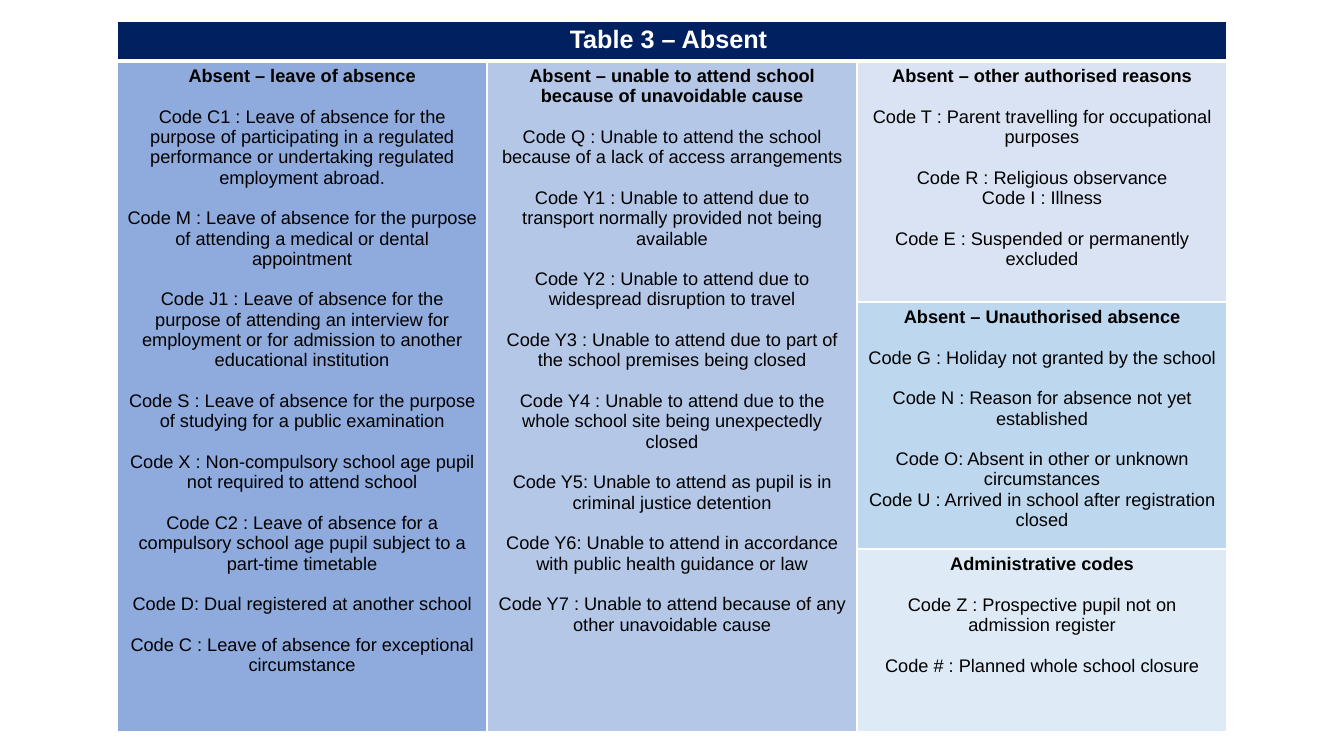
"""Build a slide with a table of school absence codes."""
from dataclasses import dataclass

from lxml.etree import SubElement
from pptx import Presentation
from pptx.dml.color import RGBColor as Rgb
from pptx.enum.text import PP_ALIGN as Align
from pptx.oxml.ns import qn
from pptx.util import Emu, Pt


@dataclass(frozen=True)
class Theme:
    """Colours, font and sizes in points."""
    font: str = "Arial"
    title_size: int = 18
    body_size: int = 13
    code_gap: float = 14.5
    rule: int = 1
    title_rule: int = 3
    white: str = "FFFFFF"
    black: str = "000000"
    title_fill: str = "002060"
    leave_fill: str = "8FAADC"
    unavoidable_fill: str = "B4C7E7"
    authorised_fill: str = "DAE3F3"
    unauthorised_fill: str = "BDD7EE"
    admin_fill: str = "DEEBF7"


THEME = Theme()
SLIDE_WIDTH, SLIDE_HEIGHT = 1344, 756
EMU_PER_PX = 12192000 / SLIDE_WIDTH
TABLE_LEFT, TABLE_TOP = 117, 21
COLUMN_WIDTH, COLUMN_COUNT = 370, 3
ROW_HEIGHTS = (40, 241, 247, 183)

TITLE = "Table 3 – Absent "
SECTIONS = [
    ((1, 0), (3, 0), THEME.leave_fill, "Absent – leave of absence", [
        ["Code C1 : Leave of absence for the purpose of participating in a regulated "
         "performance or undertaking regulated employment abroad."],
        ["Code M : Leave of absence for the purpose of attending a medical or dental appointment"],
        ["Code J1 : Leave of absence for the purpose of attending an interview for employment "
         "or for admission to another educational institution"],
        ["Code S : Leave of absence for the purpose of studying for a public examination"],
        ["Code X : Non-compulsory school age pupil not required to attend school"],
        ["Code C2 : Leave of absence for a compulsory school age pupil subject to a "
         "part-time timetable"],
        ["Code D: Dual registered at another school"],
        ["Code C : Leave of absence for exceptional circumstance"],
    ]),
    ((1, 1), (3, 1), THEME.unavoidable_fill,
     "Absent – unable to attend school because of unavoidable cause", [
        ["Code Q : Unable to attend the school because of a lack of access arrangements"],
        ["Code Y1 : Unable to attend due to transport normally provided not being available"],
        ["Code Y2 : Unable to attend due to widespread disruption to travel"],
        ["Code Y3 : Unable to attend due to part of the school premises being closed"],
        ["Code Y4 : Unable to attend due to the whole school site being unexpectedly closed"],
        ["Code Y5: Unable to attend as pupil is in criminal justice detention"],
        ["Code Y6: Unable to attend in accordance with public health guidance or law"],
        ["Code Y7 : Unable to attend because of any other unavoidable cause"],
    ]),
    ((1, 2), (1, 2), THEME.authorised_fill, "Absent – other authorised reasons", [
        ["Code T : Parent travelling for occupational purposes"],
        ["Code R : Religious observance", "Code I : Illness"],
        ["Code E : Suspended or permanently excluded"],
    ]),
    ((2, 2), (2, 2), THEME.unauthorised_fill, "Absent – Unauthorised absence", [
        ["Code G : Holiday not granted by the school"],
        ["Code N : Reason for absence not yet established"],
        ["Code O: Absent in other or unknown circumstances",
         "Code U : Arrived in school after registration closed"],
    ]),
    ((3, 2), (3, 2), THEME.admin_fill, "Administrative codes", [
        ["Code Z : Prospective pupil not on admission register"],
        ["Code # : Planned whole school closure"],
    ]),
]


def px(length):
    """Turn pixels into EMU."""
    return Emu(round(length * EMU_PER_PX))


def write(paragraph, text, size=THEME.body_size, color=THEME.black, bold=False, gap=0):
    """Write one centred paragraph with its format."""
    paragraph.alignment = Align.CENTER
    paragraph.space_before = Pt(gap)
    run = paragraph.add_run()
    run.text = text
    run.font.name = THEME.font
    run.font.size = Pt(size)
    run.font.bold = bold
    run.font.color.rgb = Rgb.from_string(color)


def paint(cell, color):
    """Give a cell a solid fill."""
    cell.fill.solid()
    cell.fill.fore_color.rgb = Rgb.from_string(color)


def rule_cell(cell, bottom=THEME.rule):
    """Draw white rules on all four sides of a cell."""
    properties = cell._tc.get_or_add_tcPr()
    widths = {"L": THEME.rule, "R": THEME.rule, "T": THEME.rule, "B": bottom}
    for position, (side, width) in enumerate(widths.items()):
        rule = SubElement(properties, qn(f"a:ln{side}"), w=str(Pt(width)))
        solid = SubElement(rule, qn("a:solidFill"))
        SubElement(solid, qn("a:srgbClr"), val=THEME.white)
        properties.insert(position, rule)


def add_absence_table(slide):
    """Add the empty ruled table."""
    frame = slide.shapes.add_table(
        len(ROW_HEIGHTS), COLUMN_COUNT, px(TABLE_LEFT), px(TABLE_TOP),
        px(COLUMN_WIDTH * COLUMN_COUNT), px(sum(ROW_HEIGHTS)))
    table = frame.table
    table.horz_banding = False
    for column in table.columns:
        column.width = px(COLUMN_WIDTH)
    for index, (row, height) in enumerate(zip(table.rows, ROW_HEIGHTS)):
        row.height = px(height)
        for cell in row.cells:
            rule_cell(cell, bottom=THEME.rule if index else THEME.title_rule)
    return table


def fill_title(table):
    """Fill the title row across all columns."""
    title = table.cell(0, 0)
    title.merge(table.cell(0, COLUMN_COUNT - 1))
    paint(title, THEME.title_fill)
    write(title.text_frame.paragraphs[0], TITLE,
          size=THEME.title_size, color=THEME.white, bold=True)


def fill_section(table, first, last, color, heading, groups):
    """Fill one section with its heading and groups of codes."""
    section = table.cell(*first)
    if first != last:
        section.merge(table.cell(*last))
    paint(section, color)
    body = section.text_frame
    write(body.paragraphs[0], heading, bold=True)
    for group in groups:
        for position, code in enumerate(group):
            write(body.add_paragraph(), code, gap=0 if position else THEME.code_gap)


def main():
    """Build and save the slide."""
    deck = Presentation()
    deck.slide_width, deck.slide_height = px(SLIDE_WIDTH), px(SLIDE_HEIGHT)
    slide = deck.slides.add_slide(deck.slide_layouts[6])
    table = add_absence_table(slide)
    fill_title(table)
    for section in SECTIONS:
        fill_section(table, *section)
    deck.save("out.pptx")


if __name__ == "__main__":
    main()
